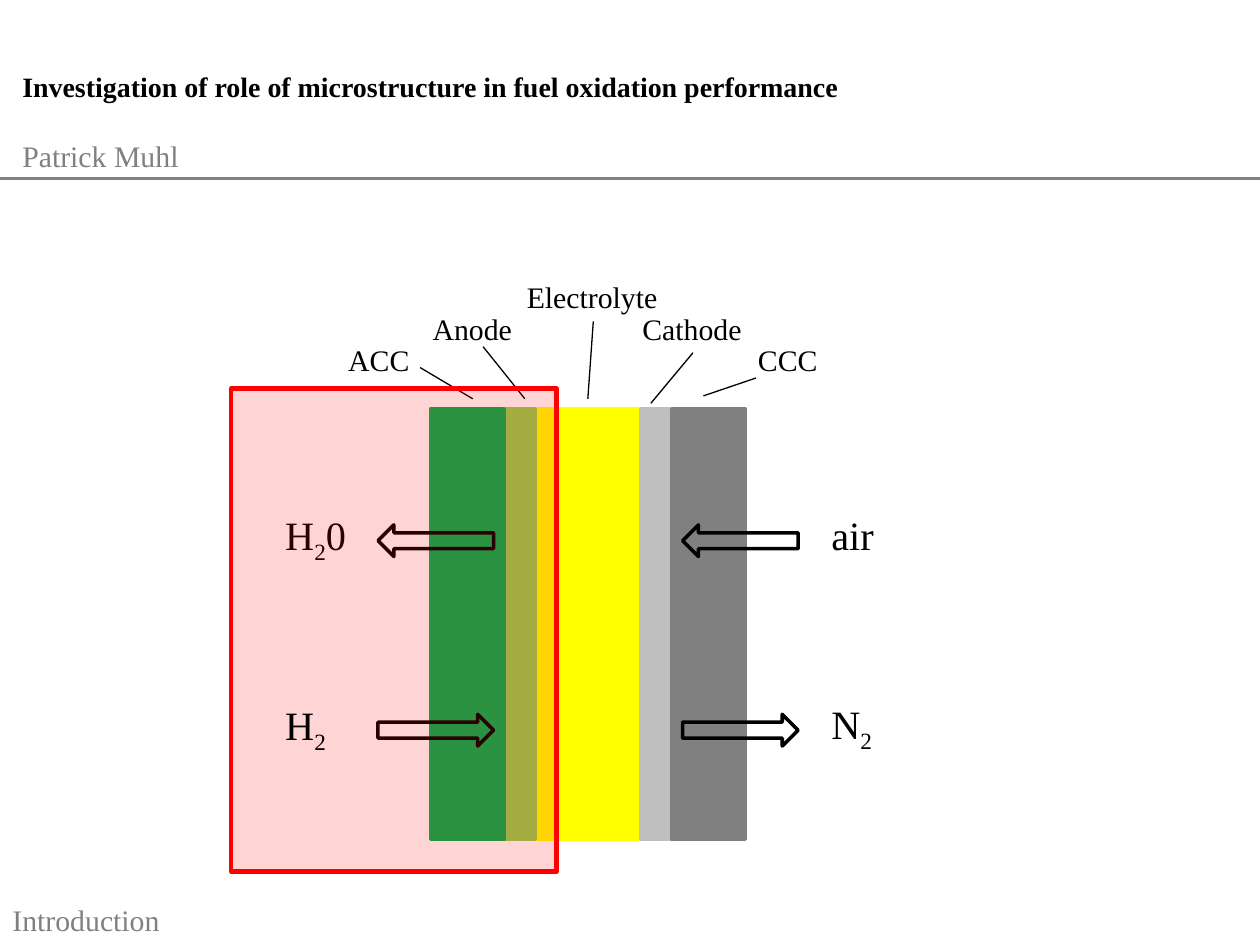
from lxml import etree
from pptx import Presentation
from pptx.dml.color import RGBColor
from pptx.enum.shapes import MSO_CONNECTOR, MSO_SHAPE
from pptx.oxml.ns import qn
from pptx.util import Cm, Pt

RECTANGLE = MSO_SHAPE.RECTANGLE
RIGHT_ARROW = MSO_SHAPE.RIGHT_ARROW
STRAIGHT = MSO_CONNECTOR.STRAIGHT

COLORS = {
    "black": "000000", "gray": "808080", "silver": "BFBFBF", "green": "00B050",
    "lime": "92D050", "yellow": "FFFF00", "red": "FF0000",
}

# Text formats: font attributes, with the colour kept apart
FONT = "Times New Roman"
FORMATS = {
    "title": ({"name": FONT, "size": Pt(16), "bold": True}, "black"),
    "muted": ({"name": FONT, "size": Pt(17), "bold": False}, "gray"),
    "label": ({"name": FONT, "size": Pt(17)}, "black"),
    "gas": ({"name": FONT, "size": Pt(23)}, "black"),
}

# Content; all lengths in cm
TITLE = "Investigation of role of microstructure in fuel oxidation performance"
AUTHOR = "Patrick Muhl"
SECTION = "Introduction"

CELL_LEFT, CELL_TOP, CELL_HEIGHT = 8.68, 8.25, 8.68
# Label, layer width, colour, label box (left, top, width), leader start and end
LAYERS = [
    ("ACC", 1.48, "green", (6.77, 6.77, 1.91), (9.53, 8.04), (8.47, 7.41)),
    ("Anode", 0.64, "lime", (8.47, 6.14, 2.2), (10.58, 8.04), (9.74, 6.99)),
    ("Electrolyte", 2.11, "yellow", (10.37, 5.5, 3.2), (11.85, 8.04), (11.96, 6.48)),
    ("Cathode", 0.64, "silver", (12.7, 6.14, 2.54), (13.12, 8.13), (13.97, 7.11)),
    ("CCC", 1.48, "gray", (15.03, 6.77, 1.91), (14.18, 7.98), (15.24, 7.62)),
]
ARROW_SIZE = (2.33, 0.64)
ARROW_COLUMNS = (7.62, 13.76)
ARROW_ROWS = [(14.4, 0), (10.58, 180)]  # top, rotation

# Left, top, runs; a run starting with "_" is a subscript
GASES = [
    (16.51, 10.16, ["air"]),
    (5.5, 10.16, ["H", "_2", "0"]),
    (16.51, 13.97, ["N", "_2"]),
]
FUEL = (5.5, 14.0, ["H", "_2"])
ANODE_REGION = (4.66, 7.83, 6.56, 9.74)


def rgb(color):
    return RGBColor.from_string(COLORS[color])


def add_text(slide, box, paragraphs):
    """Each paragraph is (runs, format name, space before in points)."""
    frame = slide.shapes.add_textbox(*map(Cm, box)).text_frame
    frame.word_wrap = True
    for index, (runs, style, space) in enumerate(paragraphs):
        paragraph = frame.add_paragraph() if index else frame.paragraphs[0]
        paragraph.space_before = Pt(space)
        values, color = FORMATS[style]
        for text in runs:
            run = paragraph.add_run()
            run.text = text.lstrip("_")
            for attribute, value in values.items():
                setattr(run.font, attribute, value)
            run.font.color.rgb = rgb(color)
            if text.startswith("_"):
                run.font._element.set("baseline", "-25000")


def add_block(slide, preset, box, line, width, fill=None, alpha=None):
    block = slide.shapes.add_shape(preset, *map(Cm, box))
    block.shadow.inherit = False
    block.line.color.rgb = rgb(line)
    block.line.width = Pt(width)
    if fill is None:
        block.fill.background()
    else:
        block.fill.solid()
        block.fill.fore_color.rgb = rgb(fill)
    if alpha is not None:
        color = block._element.spPr.find(qn("a:solidFill"))[0]
        etree.SubElement(color, qn("a:alpha")).set("val", str(alpha * 1000))
    return block


def add_line(slide, start, end, color, width):
    line = slide.shapes.add_connector(STRAIGHT, *map(Cm, (*start, *end)))
    line.line.color.rgb = rgb(color)
    line.line.width = Pt(width)
    etree.SubElement(line._element.spPr, qn("a:effectLst"))


def add_gas(slide, left, top, runs):
    add_text(slide, (left, top, 1.91, 1.24), [(runs, "gas", 0)])


def main():
    presentation = Presentation()
    presentation.slide_width, presentation.slide_height = Cm(25.4), Cm(19.05)
    slide = presentation.slides.add_slide(presentation.slide_layouts[6])

    # Header and footer
    add_line(slide, (0, 3.6), (25.4, 3.6), "gray", 1.25)
    add_text(slide, (0.2, 1.27, 22.66, 2.36),
             [([TITLE], "title", 0), ([AUTHOR], "muted", 20)])
    add_text(slide, (0, 18.06, 3.65, 0.99), [([SECTION], "muted", 0)])

    # Cell layers side by side, stacked from the centre outwards
    bands, left = [], CELL_LEFT
    for _, width, color, *_ in LAYERS:
        bands.append(((left, CELL_TOP, width, CELL_HEIGHT), color))
        left += width
    centre = len(bands) // 2
    for index in sorted(range(len(bands)), key=lambda i: abs(i - centre)):
        box, color = bands[index]
        add_block(slide, RECTANGLE, box, color, 2, fill=color)

    # Layer labels with their leaders
    for label, _, _, box, start, end in LAYERS:
        add_text(slide, (*box, 0.99), [([label], "label", 0)])
        add_line(slide, start, end, "black", 0.75)

    # Gas flows
    for column in ARROW_COLUMNS:
        for row, rotation in ARROW_ROWS:
            arrow = add_block(slide, RIGHT_ARROW, (column, row, *ARROW_SIZE), "black", 2)
            arrow.rotation = rotation
    for gas in GASES:
        add_gas(slide, *gas)

    # Highlighted anode side, with the fuel label above it
    add_block(slide, RECTANGLE, ANODE_REGION, "red", 2.5, fill="red", alpha=17)
    add_gas(slide, *FUEL)

    presentation.save("out.pptx")


if __name__ == "__main__":
    main()
